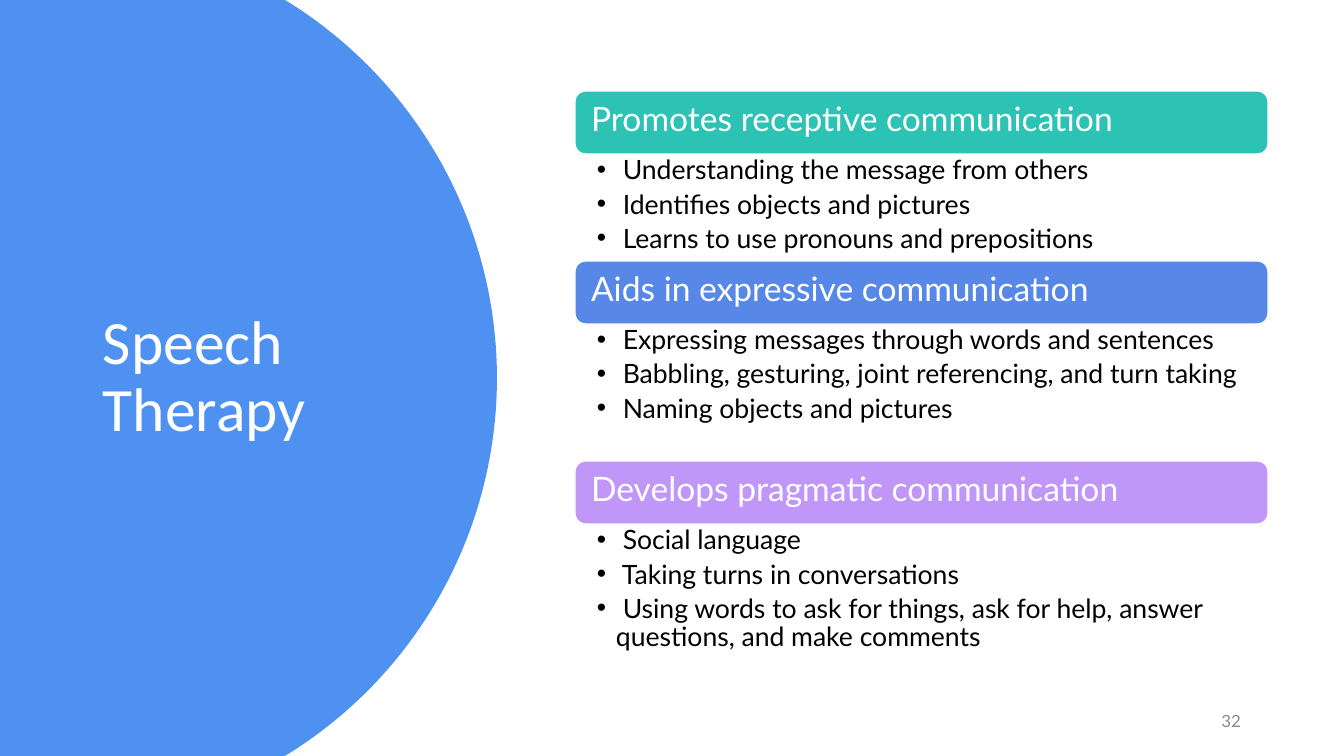
from math import asin, cos, sin

from lxml.etree import SubElement
from pptx import Presentation
from pptx.dml.color import RGBColor
from pptx.enum.shapes import MSO_SHAPE as SHAPE
from pptx.enum.text import MSO_ANCHOR as ANCHOR, PP_ALIGN as ALIGN
from pptx.oxml.ns import qn
from pptx.util import Pt

PX = 914400 / 100.8
WIDTH, HEIGHT = 1344, 756

SECTIONS = [
    ("Promotes receptive communication", "2CC3B4", 107,
     ["Understanding the message from others",
      "Identifies objects and pictures",
      "Learns to use pronouns and prepositions"]),
    ("Aids in expressive communication", "5888E7", 137,
     ["Expressing messages through words and sentences",
      "Babbling, gesturing, joint referencing, and turn taking",
      "Naming objects and pictures"]),
    ("Develops pragmatic communication", "C097F8", 137,
     ["Social language",
      "Taking turns in conversations",
      "Using words to ask for things, ask for help, answer questions, "
      "and make comments"]),
]


def emu(px):
    return round(px * PX)


def rgb(value):
    return RGBColor.from_string(value)


class SlideBuilder:
    font = "Lato"
    white = "FFFFFF"

    def __init__(self, prs):
        self.slide = prs.slides.add_slide(prs.slide_layouts[5])
        self.shapes = self.slide.shapes

    def set_text(self, s, lines, size, color, insets=(10, 5, 10, 5),
                 anchor=ANCHOR.MIDDLE, font=None, **paragraph):
        tf = s.text_frame
        left, top, right, bottom = map(emu, insets)
        frame = dict(word_wrap=True, vertical_anchor=anchor, margin_left=left,
                     margin_top=top, margin_right=right, margin_bottom=bottom)
        for name, value in frame.items():
            setattr(tf, name, value)
        style = {"alignment": ALIGN.LEFT, "line_spacing": 0.9, **paragraph}
        for i, line in enumerate(lines):
            p = tf.add_paragraph() if i else tf.paragraphs[0]
            for name, value in style.items():
                setattr(p, name, value)
            r = p.add_run()
            r.text = line
            r.font.name = font or self.font
            r.font.size = Pt(size)
            r.font.color.rgb = rgb(color)
        return tf

    def title(self, text, x, y, w, h):
        s = self.shapes.title
        s.left, s.top, s.width, s.height = map(emu, (x, y, w, h))
        self.set_text(s, [text], 44, self.white, font="Calibri")

    def textbox(self, lines, x, y, w, h, size, color, **style):
        s = self.shapes.add_textbox(*map(emu, (x, y, w, h)))
        return self.set_text(s, lines, size, color, **style)

    def bar(self, text, x, y, w, h, fill):
        s = self.shapes.add_shape(SHAPE.ROUNDED_RECTANGLE,
                                  *map(emu, (x, y, w, h)))
        s.shadow.inherit = False
        s.fill.solid()
        s.fill.fore_color.rgb = rgb(fill)
        s.line.color.rgb = rgb(self.white)
        s.line.width = Pt(1)
        self.set_text(s, [text], 24, self.white, insets=(13, 10, 13, 13))

    def bullets(self, items, x, y, w, h):
        tf = self.textbox([" " + item for item in items], x, y, w, h, 19,
                          "000000", insets=(22, 3, 19, 3), anchor=ANCHOR.TOP,
                          level=1, space_after=Pt(3.8))
        for p in tf.paragraphs:
            pPr = p._p.get_or_add_pPr()
            pPr.set("marL", str(emu(19)))
            pPr.set("indent", str(-emu(19)))
            SubElement(pPr, qn("a:buFont")).set("typeface", "Arial")
            SubElement(pPr, qn("a:buChar")).set("char", "•")

    def side_panel(self, center_x, radius, fill, steps=120):
        """Fill the slide's left side up to a circular arc, behind all else."""
        middle = HEIGHT / 2
        reach = asin(middle / radius)
        angles = [reach * (2 * i / steps - 1) for i in range(steps + 1)]
        arc = [(emu(center_x + radius * cos(a)), emu(middle + radius * sin(a)))
               for a in angles]
        builder = self.shapes.build_freeform(0, 0)
        builder.add_line_segments(arc + [(0, emu(HEIGHT))], close=True)
        s = builder.convert_to_shape()
        s.shadow.inherit = False
        s.fill.solid()
        s.fill.fore_color.rgb = rgb(fill)
        s.line.fill.background()
        self.shapes._spTree.insert(2, s._element)


def main():
    prs = Presentation()
    prs.slide_width, prs.slide_height = emu(WIDTH), emu(HEIGHT)
    b = SlideBuilder(prs)
    b.side_panel(54, 443, "4E91F0")
    b.title("Speech Therapy", 93, 71, 325, 614)

    x, y, w, bar_h = 575, 91, 693, 63
    for heading, color, list_h, items in SECTIONS:
        b.bar(heading, x, y, w, bar_h, color)
        b.bullets(items, x, y + bar_h, w, list_h)
        y += bar_h + list_h

    b.textbox(["32"], 949, 701, 302, 40, 12, "898989",
              alignment=ALIGN.RIGHT, line_spacing=1.0, space_after=Pt(6))
    prs.save("out.pptx")


if __name__ == "__main__":
    main()
